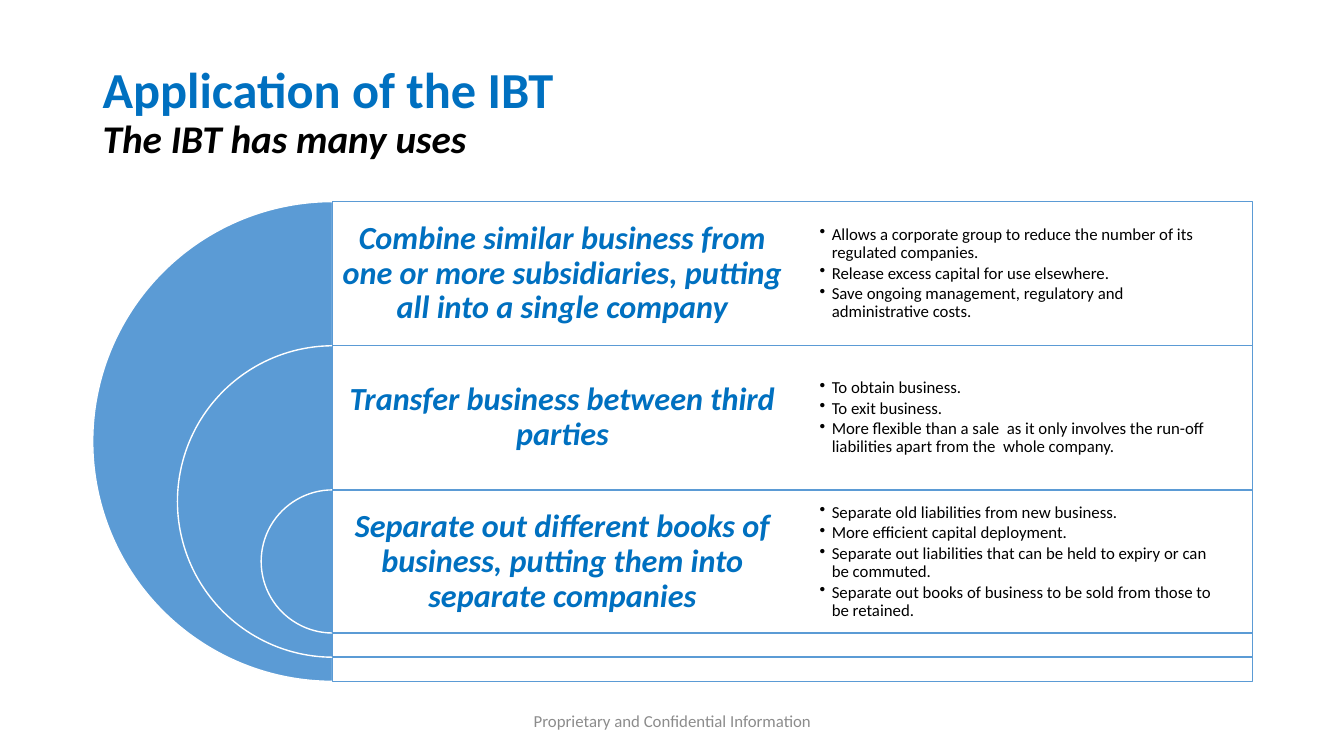
from lxml import etree
from pptx import Presentation
from pptx import util as u
from pptx.dml.color import RGBColor
from pptx.enum import shapes, text
from pptx.oxml.ns import qn

BLUE, SKY, BLACK, WHITE, GREY = "0070C0", "5B9BD5", "000000", "FFFFFF", "8C8C8C"
USES = [
    ("Combine similar business from one or more subsidiaries, putting all into a single company",
     ["Allows a corporate group to reduce the number of its regulated companies.",
      "Release excess capital for use elsewhere.",
      "Save ongoing management, regulatory and administrative costs."]),
    ("Transfer business between third parties",
     ["To obtain business.",
      "To exit business.",
      "More flexible than a sale  as it only involves the run-off liabilities "
      "apart from the  whole company."]),
    ("Separate out different books of business, putting them into separate companies",
     ["Separate old liabilities from new business.",
      "More efficient capital deployment.",
      "Separate out liabilities that can be held to expiry or can be commuted.",
      "Separate out books of business to be sold from those to be retained."]),
]


def px(n):
    """Length in EMU, at 100 px to the inch."""
    return u.Emu(n * 9144)


def rgb(color):
    return RGBColor.from_string(color)


class Deck:
    font = "Calibri"

    def __init__(self):
        self.prs = Presentation()
        self.prs.slide_width, self.prs.slide_height = px(1333), px(750)
        self.s = self.prs.slides.add_slide(self.prs.slide_layouts[6])

    def shape(self, kind, x, y, w, h, fill, line, alpha=100):
        sp = self.s.shapes.add_shape(kind, px(x), px(y), px(w), px(h))
        sp.shadow.inherit = False
        sp.fill.solid()
        sp.fill.fore_color.rgb = rgb(fill)
        sp.line.color.rgb = rgb(line)
        sp.line.width = u.Pt(1)
        if alpha < 100:
            clr = sp._element.spPr.find(qn("a:solidFill"))[0]
            etree.SubElement(clr, qn("a:alpha"), val=str(alpha * 1000))
        return sp

    def half_disc(self, x, y, size):
        sp = self.shape(shapes.MSO_SHAPE.PIE, x, y, size, size, SKY, WHITE)
        sp.adjustments[0], sp.adjustments[1] = 54, 162

    def box(self, x, y, w, h, inset=10):
        tf = self.s.shapes.add_textbox(px(x), px(y), px(w), px(h)).text_frame
        tf.word_wrap = True
        tf.vertical_anchor = text.MSO_ANCHOR.MIDDLE
        tf.margin_left = tf.margin_right = tf.margin_top = tf.margin_bottom = px(inset)
        return tf

    def style(self, p, size, color, bold=False, italic=False, center=False, spacing=0.9):
        f = p.font
        f.name, f.size, f.bold, f.italic = self.font, u.Pt(size), bold, italic
        f.color.rgb = rgb(color)
        p.line_spacing = spacing
        if center:
            p.alignment = text.PP_ALIGN.CENTER

    def title(self, main, sub, x, y, w, h):
        p = self.box(x, y, w, h, 5).paragraphs[0]
        p.line_spacing = 0.9
        for i, (words, size, color) in enumerate([(main, 36, BLUE), (sub, 28, BLACK)]):
            if i:
                p.add_line_break()
            r = p.add_run()
            r.text = words
            f = r.font
            f.name, f.size, f.bold, f.italic = self.font, u.Pt(size), True, bool(i)
            f.color.rgb = rgb(color)
        self.s.shapes[-1].text_frame.margin_left = px(10)

    def label(self, words, x, y, w, h, size, color, **look):
        p = self.box(x, y, w, h).paragraphs[0]
        p.text = words
        self.style(p, size, color, center=True, **look)

    def bullets(self, items, x, y, w, h):
        tf = self.box(x, y, w, h, 27)
        for i, item in enumerate(items):
            p = tf.add_paragraph() if i else tf.paragraphs[0]
            p.text = item
            self.style(p, 12, BLACK)
            p.space_after = u.Pt(1.8)
            pPr = p._p.get_or_add_pPr()
            pPr.set("marL", str(px(12)))
            pPr.set("indent", str(-px(12)))
            bu = etree.Element(qn("a:buChar"), char="•")
            pPr.insert_element_before(bu, "a:tabLst", "a:defRPr", "a:extLst")


def main():
    d = Deck()
    d.title("Application of the IBT", "The IBT has many uses", 92, 40, 1150, 145)
    axis, top, row, col = 330, 200, 143, 456
    for i, (use, reasons) in enumerate(USES):
        y, size = top + i * row, 476 - 167 * i
        d.half_disc(axis - size // 2, y, size)
        d.shape(shapes.MSO_SHAPE.RECTANGLE, axis, y, 2 * col, size, WHITE, SKY, alpha=90)
        d.label(use, axis, y, col, row, 23, BLUE, bold=True, italic=True)
        d.bullets(reasons, axis + col, y, col, row)
    d.label("Proprietary and Confidential Information", 442, 695, 450, 40, 12, GREY, spacing=1.0)
    d.prs.save("out.pptx")


if __name__ == "__main__":
    main()
